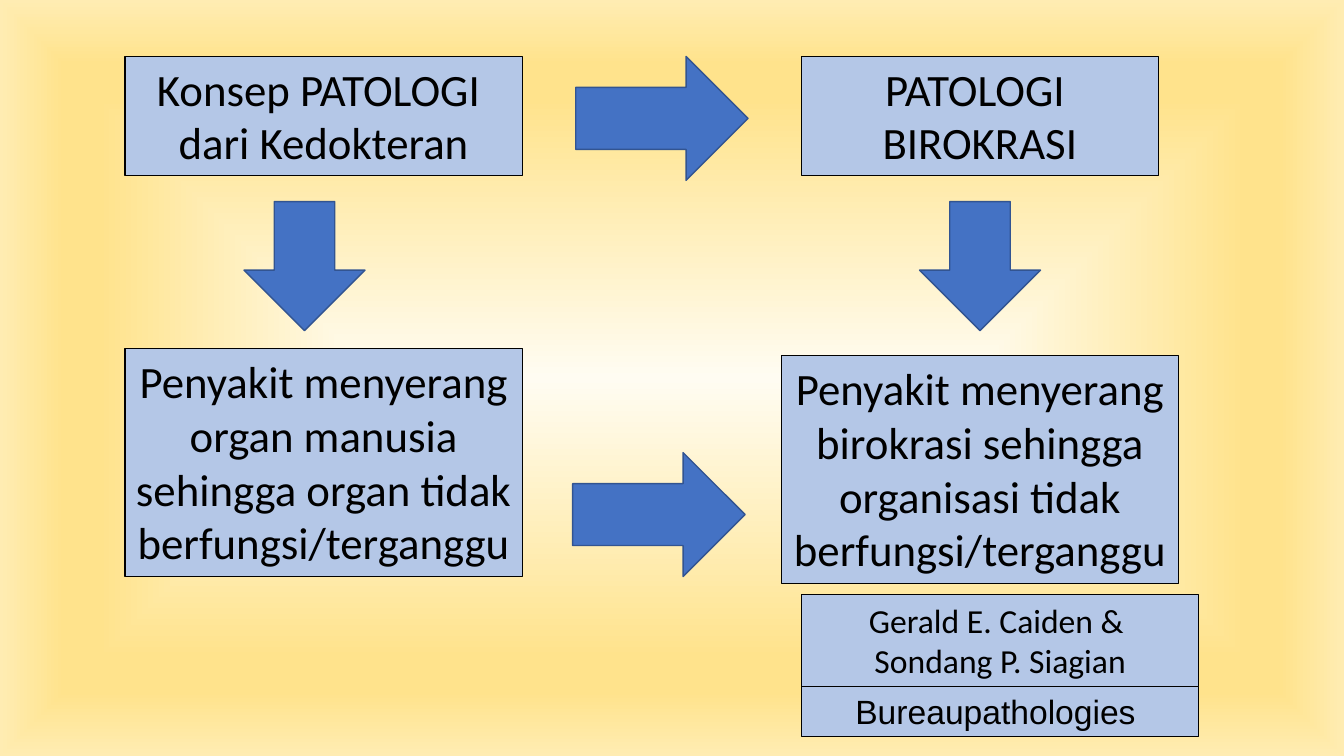
from pptx import Presentation
from pptx.dml.color import RGBColor
from pptx.enum.shapes import MSO_SHAPE
from pptx.enum.text import MSO_ANCHOR, PP_ALIGN
from pptx.oxml import parse_xml
from pptx.oxml.ns import nsdecls
from pptx.util import Pt

PX = 9144
HUES = {"box": "B4C7E7", "ink": "000000", "arrow": "4472C4", "edge": "325491",
        "core": "FFFCF2", "gold": "FFE38C", "rim": "FFECB2"}

deck = Presentation()
deck.slide_width, deck.slide_height = 1333 * PX, 750 * PX
slide = deck.slides.add_slide(deck.slide_layouts[6])

stops = "".join(
    f'<a:gs pos="{pos * 1000}"><a:srgbClr val="{HUES[hue]}"/></a:gs>'
    for pos, hue in [(0, "core"), (74, "gold"), (83, "gold"), (100, "rim")])
slide.background.fill.solid()
back = slide.element.cSld.bg.bgPr
back.replace(back[0], parse_xml(
    f'<a:gradFill {nsdecls("a")} rotWithShape="1"><a:gsLst>{stops}</a:gsLst>'
    '<a:path path="shape"><a:fillToRect l="50000" t="50000" r="50000" b="50000"/>'
    '</a:path></a:gradFill>'))


def draw(kind, spot, fill, edge, width):
    shape = slide.shapes.add_shape(kind, *[n * PX for n in spot])
    shape.shadow.inherit = False
    shape.fill.solid()
    shape.fill.fore_color.rgb = RGBColor.from_string(HUES[fill])
    shape.line.color.rgb = RGBColor.from_string(HUES[edge])
    shape.line.width = Pt(width)
    return shape


def label(text, spot, size=32, font="Calibri"):
    frame = draw(MSO_SHAPE.RECTANGLE, spot, "box", "ink", 0.75).text_frame
    frame.word_wrap = True
    frame.vertical_anchor = MSO_ANCHOR.TOP
    frame.text = text
    for para in frame.paragraphs:
        para.alignment = PP_ALIGN.CENTER
        for run in para.runs:
            run.font.size = Pt(size)
            run.font.name = font
            run.font.color.rgb = RGBColor.from_string(HUES["ink"])


label("Konsep PATOLOGI \ndari Kedokteran", (124, 56, 394, 118))
label("PATOLOGI \nBIROKRASI", (795, 56, 354, 118))
label("Penyakit menyerang organ manusia sehingga organ tidak berfungsi/terganggu",
      (124, 346, 394, 226))
label("Penyakit menyerang birokrasi sehingga organisasi tidak berfungsi/terganggu",
      (775, 353, 394, 226))
label("Gerald E. Caiden & \nSondang P. Siagian", (795, 590, 394, 91), size=24)
label("Bureaupathologies ", (795, 681, 394, 50), size=24, font="Arial")

for spot, turn in [((571, 56, 171, 123), 0), ((568, 449, 171, 123), 0),
                   ((238, 204, 128, 120), 90), ((908, 204, 128, 120), 90)]:
    arrow = draw(MSO_SHAPE.RIGHT_ARROW, spot, "arrow", "edge", 1)
    arrow.rotation = turn

deck.save("out.pptx")
